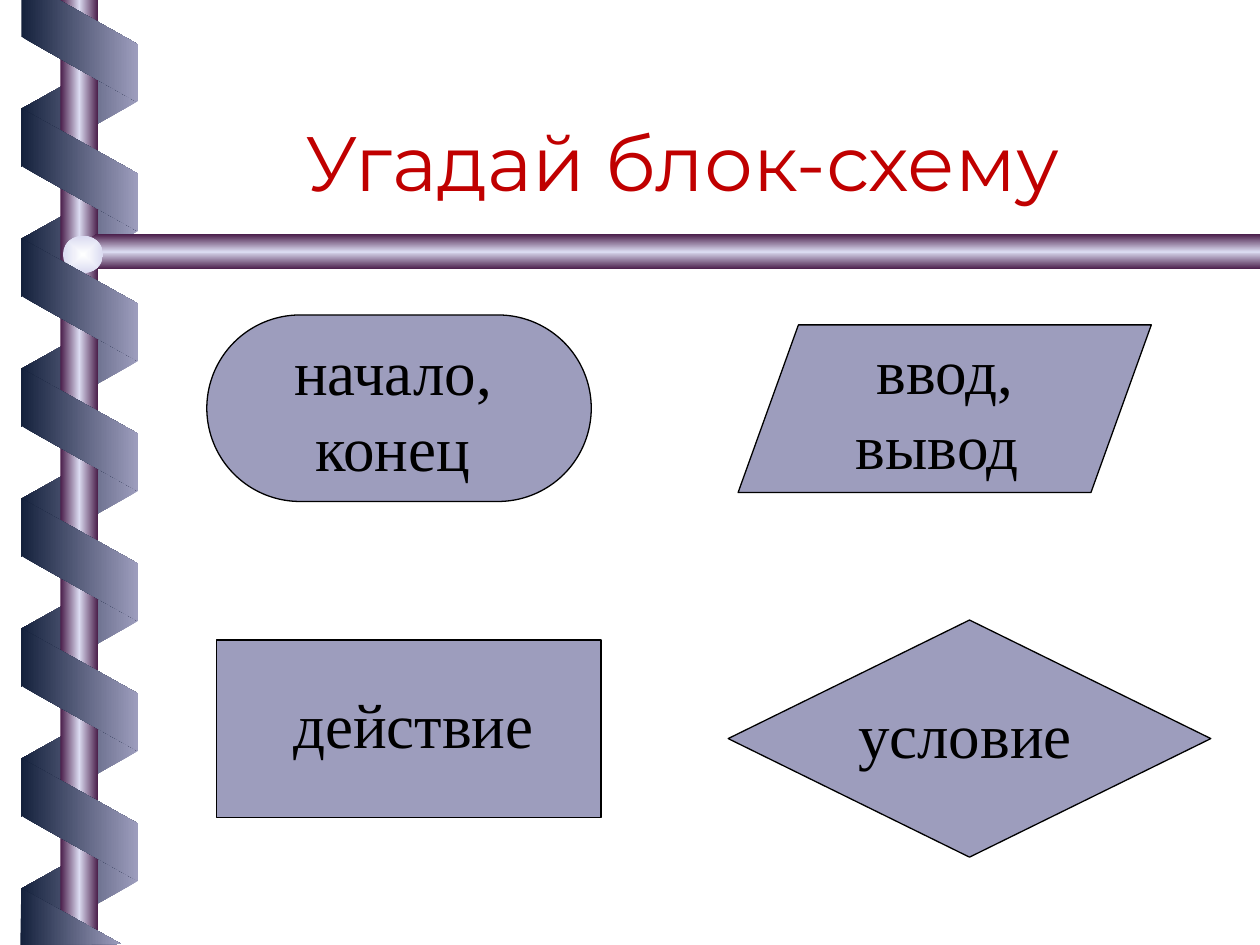
from dataclasses import dataclass

from pptx import Presentation
from pptx.dml.color import RGBColor as RGB
from pptx.enum.shapes import MSO_SHAPE as SHAPE
from pptx.enum.text import MSO_ANCHOR as ANCHOR, MSO_AUTO_SIZE as FIT, PP_ALIGN as ALIGN
from pptx.oxml import parse_xml
from pptx.oxml.ns import nsdecls
from pptx.util import Cm, Pt


@dataclass(frozen=True)
class Theme:
    title: str = "C00000"
    text: str = "000000"
    block: str = "9D9DBD"
    ribbon: tuple = ("14213C", "9D9DBD")
    pole: tuple = ("491D49", "DBDBF1", "491D49")
    ball: tuple = ("FEFFFF", "DBDBF1")
    title_font: str = "Montserrat"
    text_font: str = "Times New Roman"
    title_size: int = 44
    text_size: int = 36
    line_width: float = 0.75


class SlideBuilder:
    def __init__(self, slide, theme):
        self.s = slide
        self.theme = theme

    def shape(self, kind, box, adj=None, rotation=0, flip=False):
        sp = self.s.shapes.add_shape(kind, *map(Cm, box))
        sp.shadow.inherit = False
        sp.line.fill.background()
        sp.rotation = rotation
        if adj is not None:
            sp.adjustments[0] = adj
        if flip:
            sp._element.spPr.xfrm.set("flipH", "1")
        return sp

    def gradient(self, sp, colors, angle=0, radial=False):
        """Spread the colours evenly; the direction ignores the shape's rotation."""
        step = 100000 // (len(colors) - 1)
        stops = "".join(f'<a:gs pos="{i * step}"><a:srgbClr val="{c}"/></a:gs>'
                        for i, c in enumerate(colors))
        if radial:
            course = ('<a:path path="shape"><a:fillToRect l="50000" t="50000" '
                      'r="50000" b="50000"/></a:path>')
        else:
            course = f'<a:lin ang="{angle * 60000}" scaled="1"/>'
        sp.fill.background()
        spPr = sp._element.spPr
        old = spPr.find("{*}noFill")
        spPr.replace(old, parse_xml(
            f'<a:gradFill {nsdecls("a")} rotWithShape="0">'
            f'<a:gsLst>{stops}</a:gsLst>{course}</a:gradFill>'))

    def ribbon_strip(self, top, front):
        sp = self.shape(SHAPE.PARALLELOGRAM, (0.36, top, 2.48, 2.36), 0.56,
                        270 if front else 90, flip=not front)
        colors = self.theme.ribbon
        self.gradient(sp, colors if front else colors[::-1])

    def ribbon_end(self, points):
        pts = [(Cm(x), Cm(y)) for x, y in points]
        fb = self.s.shapes.build_freeform(*pts[0])
        fb.add_line_segments(pts[1:], close=True)
        sp = fb.convert_to_shape()
        sp.shadow.inherit = False
        sp.line.fill.background()
        self.gradient(sp, self.theme.ribbon)

    def block(self, kind, box, adj=None):
        sp = self.shape(kind, box, adj)
        sp.fill.solid()
        sp.fill.fore_color.rgb = RGB.from_string(self.theme.block)
        sp.line.color.rgb = RGB.from_string(self.theme.text)
        sp.line.width = Pt(self.theme.line_width)

    def add_text(self, sp, text, font, size, color):
        tf = sp.text_frame
        tf.word_wrap = True
        tf.auto_size = FIT.SHAPE_TO_FIT_TEXT
        p = tf.paragraphs[0]
        p.alignment = ALIGN.CENTER
        r = p.add_run()
        r.text = text
        r.font.name = font
        r.font.size = Pt(size)
        r.font.color.rgb = RGB.from_string(color)

    def title(self, text, box):
        sp = self.s.shapes.title
        sp.left, sp.top, sp.width, sp.height = map(Cm, box)
        t = self.theme
        self.add_text(sp, text, t.title_font, t.title_size, t.title)
        sp.text_frame.vertical_anchor = ANCHOR.BOTTOM

    def label(self, text, box):
        t = self.theme
        sp = self.s.shapes.add_textbox(*map(Cm, box))
        self.add_text(sp, text, t.text_font, t.text_size, t.text)


def draw_spiral(b):
    pitch = 2.62
    for i in range(7):
        b.ribbon_strip(0.94 + i * pitch, front=False)

    pole = b.shape(SHAPE.RECTANGLE, (1.22, 0, 0.76, 19.05))
    b.gradient(pole, b.theme.pole)
    bar = b.shape(SHAPE.PENTAGON, (1.52, 4.72, 23.88, 0.71), 0.59, flip=True)
    b.gradient(bar, b.theme.pole, angle=90)
    ball = b.shape(SHAPE.OVAL, (1.27, 4.75, 0.81, 0.76))
    b.gradient(ball, b.theme.ball, radial=True)

    for i in range(6):
        b.ribbon_strip(2.24 + i * pitch, front=True)
    b.ribbon_end([(0.43, 0), (0.43, 0.74), (2.77, 2.06), (2.77, 0.89), (1.19, 0)])
    b.ribbon_end([(2.44, 19.03), (0.43, 17.91), (0.41, 19.05)])


def main():
    prs = Presentation()
    prs.slide_width, prs.slide_height = Cm(25.4), Cm(19.05)
    b = SlideBuilder(prs.slides.add_slide(prs.slide_layouts[5]), Theme())

    draw_spiral(b)
    b.title("Угадай блок-схему", (2.97, 2.18, 21.59, 2.11))

    b.block(SHAPE.PARALLELOGRAM, (14.88, 6.55, 8.33, 3.38), 0.36)
    b.block(SHAPE.ROUNDED_RECTANGLE, (4.17, 6.35, 7.75, 3.76), 0.5)
    b.block(SHAPE.RECTANGLE, (4.37, 12.9, 7.75, 3.58))
    b.block(SHAPE.DIAMOND, (14.68, 12.5, 9.73, 4.78))

    for text, left, top, height in [
        ("начало, конец", 4.75, 6.58, 3.33),
        ("ввод, вывод ", 15.88, 6.55, 3.33),
        ("действие", 5.16, 13.69, 1.8),
        ("условие", 16.28, 13.89, 1.8),
    ]:
        b.label(text, (left, top, 6.35, height))

    prs.save("out.pptx")


if __name__ == "__main__":
    main()
